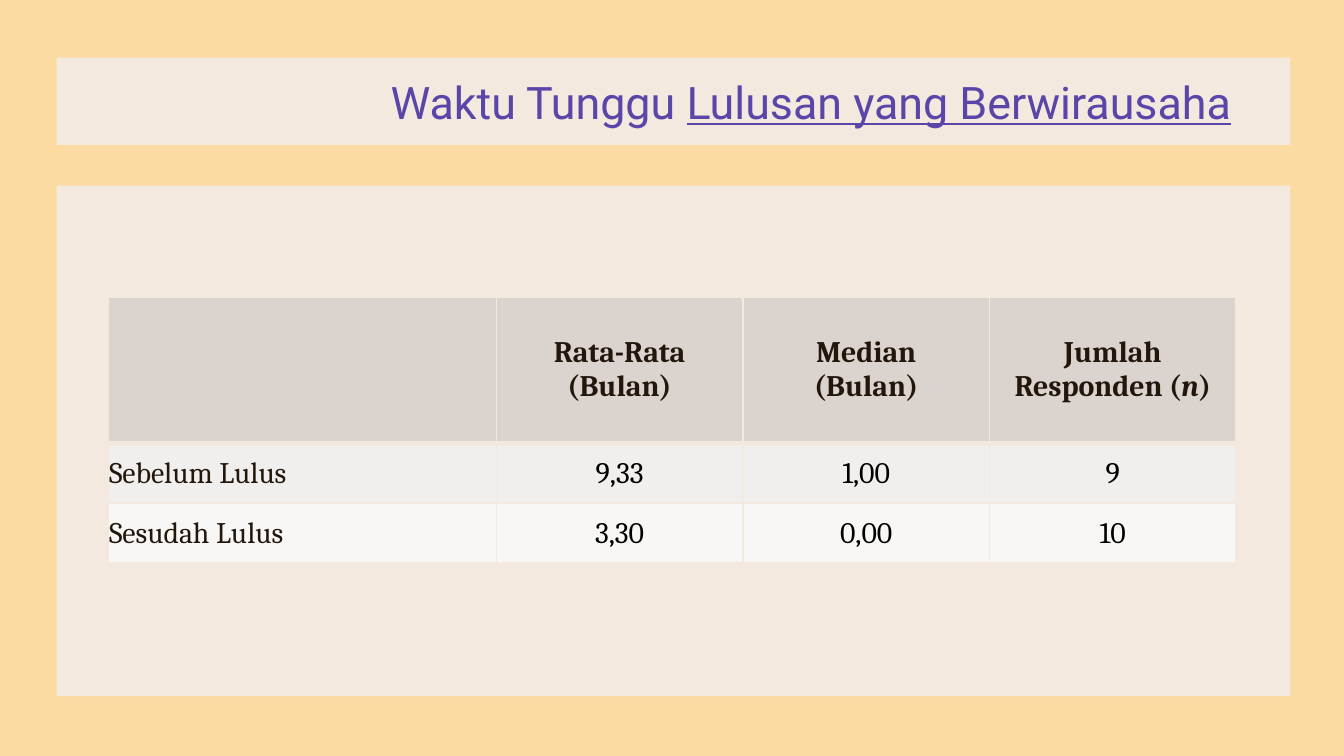
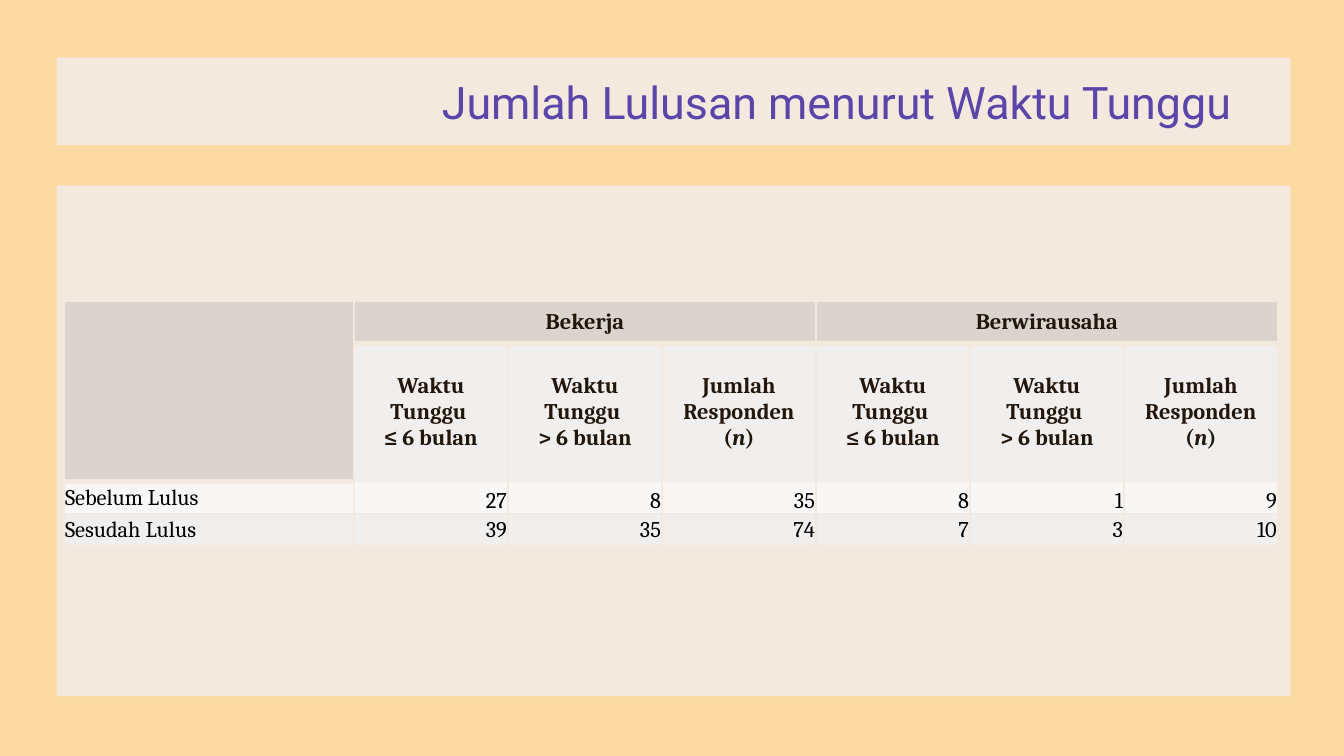
"""Builds two slides of graduate waiting-time tables."""
import pptx
import pptx.dml.color
import pptx.enum.shapes
import pptx.enum.text
import pptx.oxml
import pptx.oxml.ns
import pptx.util

Cm, Pt = pptx.util.Cm, pptx.util.Pt
ALIGN, ANCHOR = pptx.enum.text.PP_ALIGN, pptx.enum.text.MSO_ANCHOR

COLORS = {
    "background": "FCDBA2", "band": "F4E9DF", "title": "5A45A8",
    "header": "DBD4CE", "odd": "F1EFED", "even": "F8F7F6",
    "brown": "23170C", "black": "000000",
}
BANDS = [(1.07, 1.09, 23.32, 1.65), (1.07, 3.51, 23.32, 9.65)]
TITLE_RIGHT = 23.52
HEADING_INSETS = (0.25, 0.13, 0.25, 0.13)
BODY_INSETS = (0.02, 0.02, 0.02, 0)

WAITING_HEADINGS = ["Waktu Tunggu \n≤ 6 bulan", "Waktu Tunggu \n> 6 bulan",
                    "Jumlah Responden (*n*)"]
SLIDES = [
    {
        "title": "Waktu Tunggu *Lulusan yang Berwirausaha*",
        "title_left": 1.4,
        "corner": (2.04, 5.61),
        "columns": [7.34] + [4.66] * 3,
        "row_heights": [2.77, 1.13, 1.13],
        "headings": [["", "Rata-Rata\n(Bulan)", "Median\n(Bulan)",
                      "Jumlah Responden (*n*)"]],
        "body": [["Sebelum Lulus", "9,33", "1,00", "9"],
                 ["Sesudah Lulus", "3,30", "0,00", "10"]],
        "merges": [],
        "size": 16, "label_color": "brown", "value_align": ALIGN.CENTER,
        "value_anchors": [ANCHOR.MIDDLE, ANCHOR.MIDDLE],
    },
    {
        "title": "Jumlah Lulusan menurut Waktu Tunggu",
        "title_left": 1.22,
        "corner": (1.21, 5.69),
        "columns": [5.48] + [2.91] * 6,
        "row_heights": [0.8, 2.61, 0.61, 0.61],
        "headings": [["", "Bekerja", "", "", "Berwirausaha", "", ""],
                     [""] + WAITING_HEADINGS * 2],
        "body": [["Sebelum Lulus", "27", "8", "35", "8", "1", "9"],
                 ["Sesudah Lulus", "39", "35", "74", "7", "3", "10"]],
        "merges": [((0, 0), (1, 0)), ((0, 1), (0, 3)), ((0, 4), (0, 6))],
        "size": 12, "label_color": "black", "value_align": ALIGN.RIGHT,
        "value_anchors": [ANCHOR.BOTTOM, ANCHOR.MIDDLE],
    },
]


def rgb(color):
    return pptx.dml.color.RGBColor.from_string(COLORS[color])


def paint(fill, color):
    fill.solid()
    fill.fore_color.rgb = rgb(color)


def set_all(target, values):
    for name, value in values.items():
        setattr(target, name, value)


def margins(insets):
    sides = ("margin_left", "margin_top", "margin_right", "margin_bottom")
    return {side: Cm(inset) for side, inset in zip(sides, insets)}


def write(frame, text, align, color, font, emphasis):
    for number, line in enumerate(text.split("\n")):
        paragraph = frame.add_paragraph() if number else frame.paragraphs[0]
        paragraph.alignment = align
        for part, words in enumerate(line.split("*")):
            if part and not words:
                continue
            run = paragraph.add_run()
            run.text = words
            set_all(run.font, font)
            run.font.color.rgb = rgb(color)
            if part % 2:
                setattr(run.font, emphasis, True)


def draw_borders(cell, bottom):
    properties = cell._tc.get_or_add_tcPr()
    for place, (side, width) in enumerate(
            {"L": 1, "R": 1, "T": 1, "B": bottom}.items()):
        properties.insert(place, pptx.oxml.parse_xml(
            f'<a:ln{side} {pptx.oxml.ns.nsdecls("a")} w="{Pt(width)}">'
            f'<a:solidFill><a:srgbClr val="{COLORS["band"]}"/></a:solidFill>'
            f'</a:ln{side}>'))


def add_bands(slide):
    for box in BANDS:
        band = slide.shapes.add_shape(
            pptx.enum.shapes.MSO_SHAPE.RECTANGLE, *map(Cm, box))
        band.shadow.inherit = False
        paint(band.fill, "band")
        band.line.fill.background()


def add_title(slide, content):
    left = content["title_left"]
    _, top, _, height = BANDS[0]
    title = slide.shapes.add_textbox(
        Cm(left), Cm(top), Cm(TITLE_RIGHT - left), Cm(height))
    set_all(title.text_frame, {"word_wrap": True,
                               "vertical_anchor": ANCHOR.MIDDLE,
                               **margins([0.25] * 4)})
    write(title.text_frame, content["title"], ALIGN.RIGHT, "title",
          {"name": "Roboto", "size": Pt(24)}, "underline")


def add_waiting_table(slide, content):
    columns, heights = content["columns"], content["row_heights"]
    headings = content["headings"]
    table = slide.shapes.add_table(
        len(heights), len(columns), *map(Cm, content["corner"]),
        Cm(sum(columns)), Cm(sum(heights))).table
    table.horz_banding = False
    for column, width in zip(table.columns, columns):
        column.width = Cm(width)
    for row, height in zip(table.rows, heights):
        row.height = Cm(height)
    for start, end in content["merges"]:
        table.cell(*start).merge(table.cell(*end))

    for r, texts in enumerate(headings + content["body"]):
        is_heading = r < len(headings)
        fill = "header" if r == 0 else "odd" if r % 2 else "even"
        for c, text in enumerate(texts):
            cell = table.cell(r, c)
            align, anchor, color = ALIGN.CENTER, ANCHOR.MIDDLE, "brown"
            if not is_heading and c == 0:
                align, color = ALIGN.LEFT, content["label_color"]
            elif not is_heading:
                align, color = content["value_align"], "black"
                anchor = content["value_anchors"][r - len(headings)]
            insets = HEADING_INSETS if is_heading else BODY_INSETS
            set_all(cell, {"vertical_anchor": anchor, **margins(insets)})
            spans_down = cell.is_merge_origin and cell.span_height > 1
            paint(cell.fill, "header" if spans_down else fill)
            draw_borders(cell, 3 if r == 0 else 1)
            write(cell.text_frame, text, align, color,
                  {"name": "Cambria", "size": Pt(content["size"]),
                   "bold": is_heading}, "italic")


def main():
    deck = pptx.Presentation()
    deck.slide_width, deck.slide_height = Cm(25.4), Cm(14.29)
    for content in SLIDES:
        slide = deck.slides.add_slide(deck.slide_layouts[6])
        paint(slide.background.fill, "background")
        add_bands(slide)
        add_title(slide, content)
        add_waiting_table(slide, content)
    deck.save("out.pptx")


if __name__ == "__main__":
    main()
